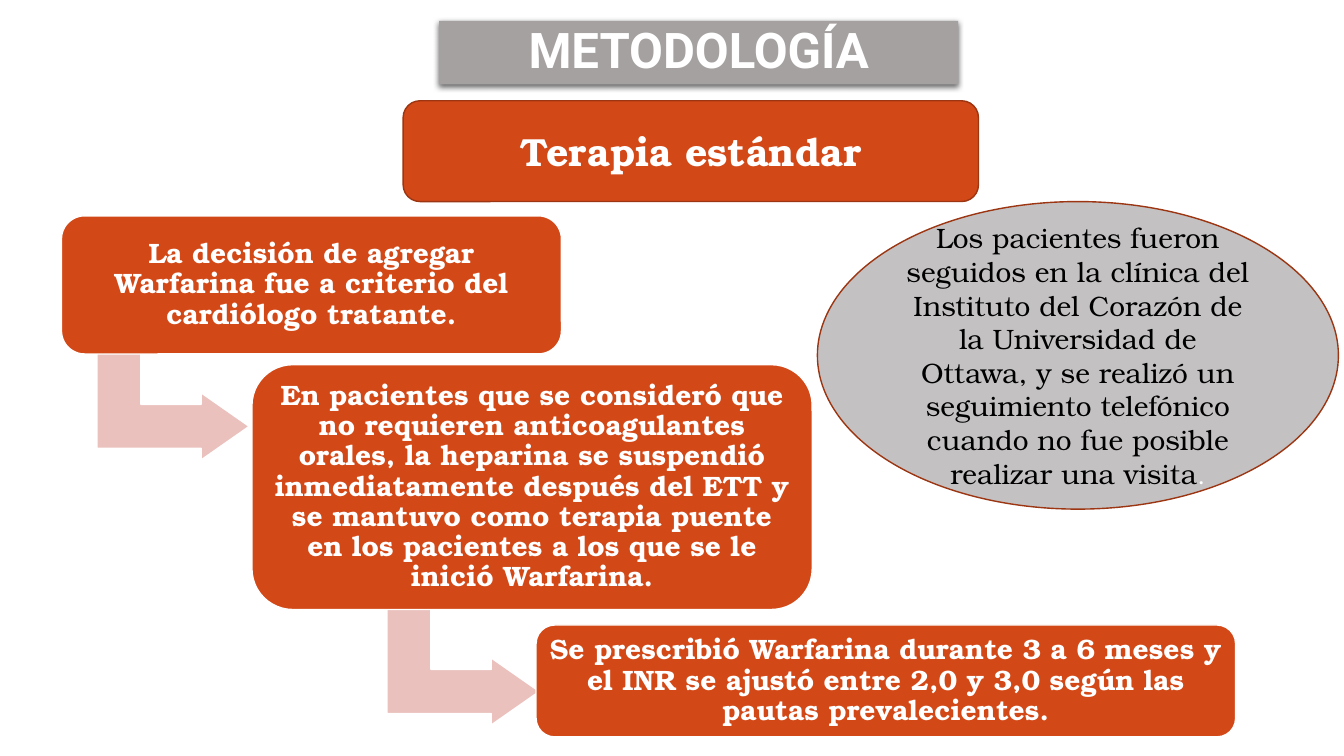
from lxml import etree
from pptx import Presentation
from pptx.dml.color import RGBColor
from pptx.enum.shapes import MSO_SHAPE as Shape
from pptx.enum.text import MSO_ANCHOR as Anchor, PP_ALIGN as Align
from pptx.oxml.ns import qn
from pptx.util import Cm, Pt

COLORS = {"orange": "D34817", "rust": "9C3511", "pink": "EAC1BD", "silver": "C3C1C1",
          "gray": "A6A1A1", "white": "FFFFFF", "black": "000000"}
SERIF, SANS = "TeX Gyre Bonum", "Roboto"

TITLE = ("METODOLOGÍA", (11.07, 0.53, 13.08, 1.6))
THERAPY = ("Terapia estándar", (10.16, 2.54, 14.5, 2.54))
STEPS = [
    ("La decisión de agregar Warfarina fue a criterio del cardiólogo tratante.",
     (1.55, 5.44, 12.6, 3.48)),
    ("En pacientes que se consideró que no requieren anticoagulantes orales, la heparina "
     "se suspendió inmediatamente después del ETT y se mantuvo como terapia puente en los "
     "pacientes a los que se le inició Warfarina.", (6.35, 9.19, 14.12, 6.17)),
    ("Se prescribió Warfarina durante 3 a 6 meses y el INR se ajustó entre 2,0 y 3,0 según "
     "las pautas prevalecientes.", (13.51, 15.75, 17.63, 2.82)),
]
ARROW_CORNERS = [(2.67, 7.98), (9.98, 14.66)]
ARROW_SIZE = (3.38, 3.84)
ARROW_ADJUSTMENTS = (0.328, 0.25, 0.358)
FOLLOW_UP = ("Los pacientes fueron seguidos en la clínica del Instituto del Corazón de la "
             "Universidad de Ottawa, y se realizó un seguimiento telefónico cuando no fue "
             "posible realizar una visita", (20.6, 5.08, 13.13, 7.75))


def rgb(name):
    return RGBColor.from_string(COLORS[name])


def add_figure(slide, kind, box, fill, line=None):
    figure = slide.shapes.add_shape(kind, *map(Cm, box))
    figure.shadow.inherit = False
    figure.fill.solid()
    figure.fill.fore_color.rgb = rgb(fill)
    if line:
        figure.line.color.rgb = rgb(line)
        figure.line.width = Pt(1)
    else:
        figure.line.fill.background()
    return figure


def style_run(run, size, color, font=SERIF, bold=False):
    run.font.size, run.font.name, run.font.bold = Pt(size), font, bold
    run.font.color.rgb = rgb(color)


def write(figure, text, size, color="white", font=SERIF, bold=True, spacing=None):
    frame = figure.text_frame
    frame.word_wrap = True
    frame.vertical_anchor = Anchor.MIDDLE
    frame.text = text
    paragraph = frame.paragraphs[0]
    paragraph.alignment = Align.CENTER
    paragraph.line_spacing = spacing
    style_run(paragraph.runs[0], size, color, font, bold)
    return paragraph


def add_shadow(figure):
    effects = figure._element.spPr.find(qn("a:effectLst"))
    shadow = etree.SubElement(effects, qn("a:outerShdw"), blurRad=str(Pt(4)),
                              dist=str(Pt(1.5)), dir="5400000", rotWithShape="0")
    color = etree.SubElement(shadow, qn("a:srgbClr"), val=COLORS["black"])
    etree.SubElement(color, qn("a:alpha"), val="60000")


def main():
    """Build the standard therapy methodology slide."""
    deck = Presentation()
    deck.slide_width, deck.slide_height = Cm(33.87), Cm(19.05)
    slide = deck.slides.add_slide(deck.slide_layouts[6])

    for corner in ARROW_CORNERS:
        arrow = add_figure(slide, Shape.BENT_UP_ARROW, corner + ARROW_SIZE, "pink", "white")
        arrow.rotation = 90
        for index, value in enumerate(ARROW_ADJUSTMENTS):
            arrow.adjustments[index] = value

    for text, box in STEPS:
        step = add_figure(slide, Shape.ROUNDED_RECTANGLE, box, "orange", "white")
        write(step, text, 20, spacing=0.9)
        frame = step.text_frame
        frame.margin_left = frame.margin_right = Cm(0.2)
        frame.margin_top = frame.margin_bottom = Cm(0.2)

    text, box = FOLLOW_UP
    follow_up = add_figure(slide, Shape.OVAL, box, "silver", "rust")
    period = write(follow_up, text, 20, "black", bold=False).add_run()
    period.text = "."
    style_run(period, 18, "white")

    text, box = TITLE
    title = add_figure(slide, Shape.RECTANGLE, box, "gray")
    add_shadow(title)
    write(title, text, 35.1, font=SANS, spacing=0.9)

    text, box = THERAPY
    therapy = add_figure(slide, Shape.ROUNDED_RECTANGLE, box, "orange", "rust")
    write(therapy, text, 28)

    deck.save("out.pptx")


if __name__ == "__main__":
    main()
